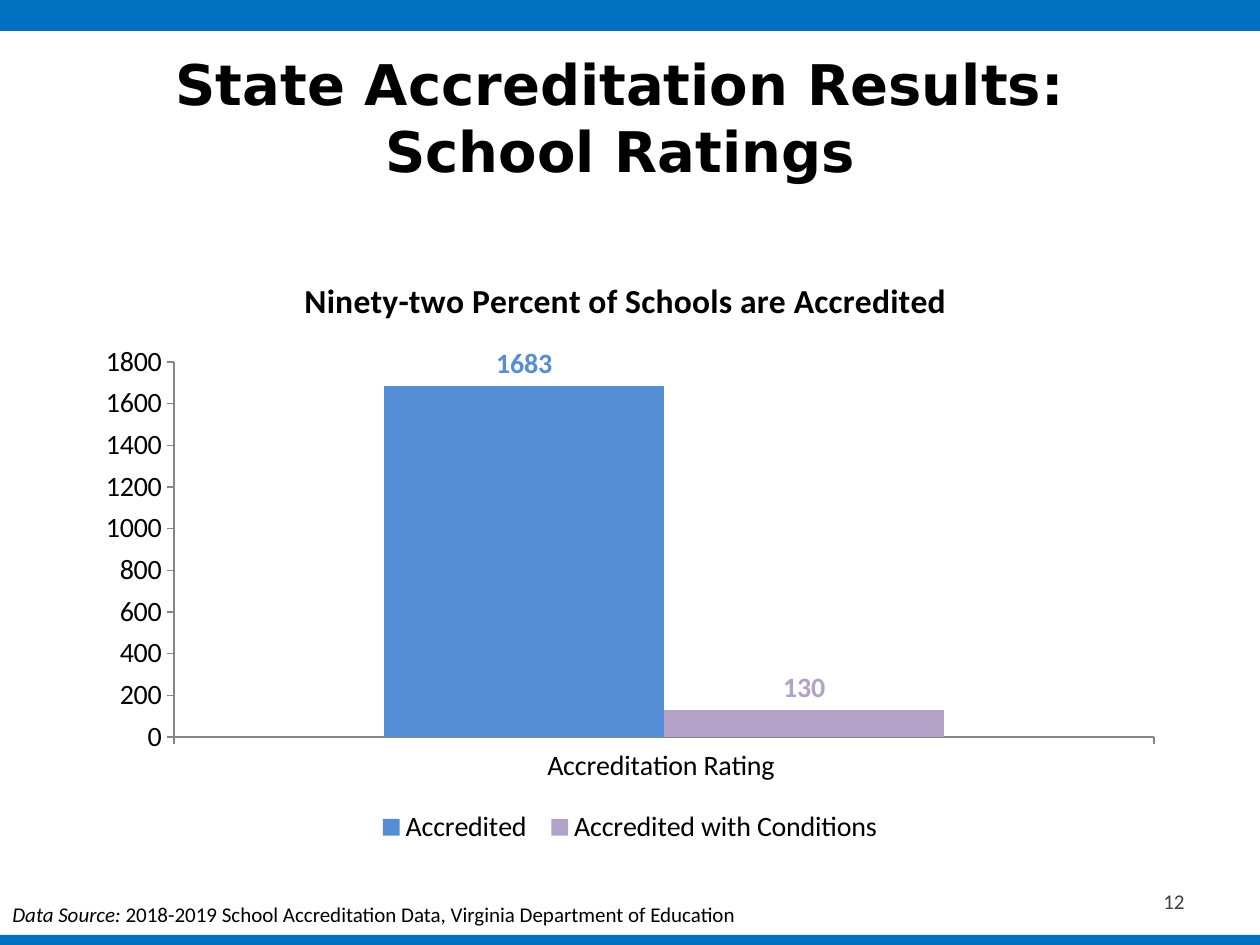
import pptx
import pptx.chart.data
import pptx.dml.color
import pptx.enum.chart
import pptx.enum.shapes
import pptx.enum.text
import pptx.util

COLORS = {
    "band": "0070C0", "text": "000000", "number": "404040", "axis": "868686",
    "accredited": "558ED5", "conditions": "B3A2C7", "page": "FFFFFF",
}
WIDTH, HEIGHT = 1260, 945
PX_PER_INCH = 126
ALIGN = pptx.enum.text.PP_ALIGN
ANCHOR = pptx.enum.text.MSO_ANCHOR


def px(*lengths):
    """Turn pixel lengths into a list of EMU."""
    return [round(n * 914400 / PX_PER_INCH) for n in lengths]


def rgb(name):
    return pptx.dml.color.RGBColor.from_string(COLORS[name])


def format_font(font, size=12, face="Calibri", color="text", bold=False, italic=False):
    font.size = pptx.util.Pt(size)
    font.name = face
    font.bold = bold
    font.italic = italic
    font.color.rgb = rgb(color)


def write(frame, *parts, align=ALIGN.LEFT, anchor=ANCHOR.TOP, wrap=True, **style):
    """Fill a frame with one paragraph; each part is (text, extra font format)."""
    frame.word_wrap = wrap
    frame.vertical_anchor = anchor
    paragraph = frame.paragraphs[0]
    paragraph.alignment = align
    for text, extra in parts:
        for index, line in enumerate(text.split("\n")):
            if index:
                paragraph.add_line_break()
            run = paragraph.add_run()
            run.text = line
            format_font(run.font, **{**style, **extra})


class Deck:
    def __init__(self):
        self.show = pptx.Presentation()
        self.show.slide_width, self.show.slide_height = px(WIDTH, HEIGHT)
        self.slide = self.show.slides.add_slide(self.show.slide_layouts[5])
        self.slide.background.fill.solid()
        self.slide.background.fill.fore_color.rgb = rgb("page")

    def band(self, top, height):
        band = self.slide.shapes.add_shape(
            pptx.enum.shapes.MSO_SHAPE.RECTANGLE, *px(0, top, WIDTH, height))
        band.shadow.inherit = False
        band.fill.solid()
        band.fill.fore_color.rgb = rgb("band")
        band.line.fill.background()

    def title(self, text, box):
        title = self.slide.shapes.title
        title.left, title.top, title.width, title.height = px(*box)
        write(title.text_frame, (text, {}), align=ALIGN.CENTER, anchor=ANCHOR.MIDDLE,
              size=32, face="DejaVu Sans", bold=True)

    def text(self, box, *parts, **style):
        frame = self.slide.shapes.add_textbox(*px(*box)).text_frame
        write(frame, *parts, **style)
        return frame

    def columns(self, box, heading, category, ratings):
        """Add a column chart; ratings are (name, value, colour) series."""
        data = pptx.chart.data.CategoryChartData()
        data.categories = [category]
        for name, value, _ in ratings:
            data.add_series(name, [value])
        chart = self.slide.shapes.add_chart(
            pptx.enum.chart.XL_CHART_TYPE.COLUMN_CLUSTERED, *px(*box), data).chart
        format_font(chart.font, size=16)
        chart.has_title = True
        write(chart.chart_title.text_frame, (heading, {}), align=ALIGN.CENTER,
              size=19.2, bold=True)
        chart.chart_title.include_in_layout = False
        chart.has_legend = True
        chart.legend.position = pptx.enum.chart.XL_LEGEND_POSITION.BOTTOM
        chart.legend.include_in_layout = False

        for axis in (chart.category_axis, chart.value_axis):
            axis.has_major_gridlines = False
            axis.major_tick_mark = pptx.enum.chart.XL_TICK_MARK.OUTSIDE
            axis.format.line.color.rgb = rgb("axis")
        chart.value_axis.minimum_scale = 0
        chart.value_axis.maximum_scale = 1800
        chart.value_axis.major_unit = 200

        plot = chart.plots[0]
        plot.gap_width = 150
        plot.overlap = 0
        plot.vary_by_categories = False
        for series, (_, _, color) in zip(plot.series, ratings):
            series.format.fill.solid()
            series.format.fill.fore_color.rgb = rgb(color)
            labels = series.data_labels
            labels.show_value = True
            labels.position = pptx.enum.chart.XL_LABEL_POSITION.OUTSIDE_END
            format_font(labels.font, size=16, color=color, bold=True)


def main():
    deck = Deck()
    deck.band(935, 10)
    deck.band(0, 31)
    deck.title("State Accreditation Results: \nSchool Ratings ", (63, 38, 1134, 157))
    deck.text((903, 876, 294, 50), ("12", {}), align=ALIGN.RIGHT,
              anchor=ANCHOR.MIDDLE, color="number")
    deck.columns((84, 252, 1092, 598), "Ninety-two Percent of Schools are Accredited ",
                 "Accreditation Rating ",
                 [("Accredited ", 1683, "accredited"),
                  ("Accredited with Conditions", 130, "conditions")])
    source = deck.text(
        (0, 895, 756, 38), ("Data Source: ", {"italic": True}),
        ("2018-2019 School Accreditation Data, Virginia Department of Education", {}),
        wrap=False)
    source.auto_size = pptx.enum.text.MSO_AUTO_SIZE.SHAPE_TO_FIT_TEXT
    deck.show.save("out.pptx")


if __name__ == "__main__":
    main()
